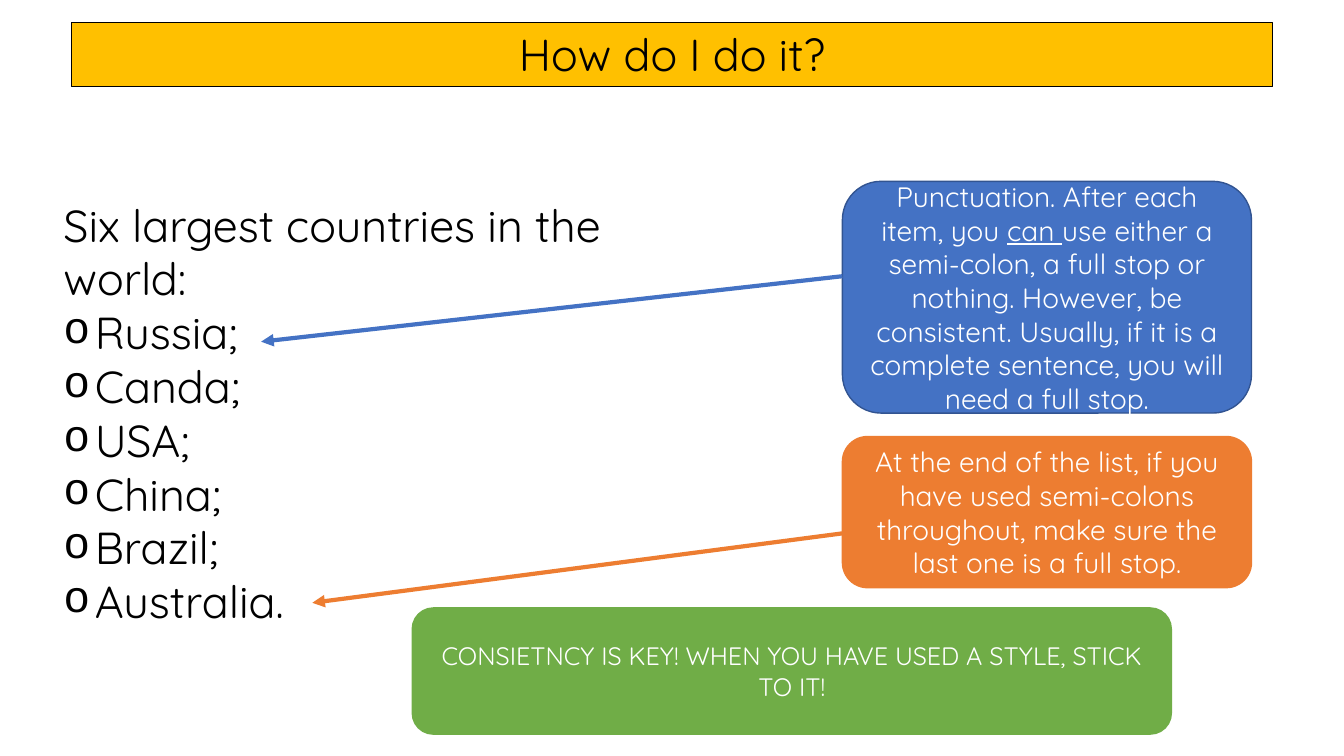
from lxml import etree
from pptx import Presentation
from pptx.dml.color import RGBColor
from pptx.enum import shapes as sh, text as tx
from pptx.oxml.ns import qn
from pptx.util import Cm, Pt

FONT = "Quicksand"
BLACK, WHITE = "000000", "FFFFFF"
BLUE, NAVY, ORANGE, GREEN, GOLD = "4472C4", "325491", "ED7D31", "70AD47", "FFC000"
RECT, ROUND = sh.MSO_SHAPE.RECTANGLE, sh.MSO_SHAPE.ROUNDED_RECTANGLE
LEFT, MID = tx.PP_ALIGN.LEFT, tx.PP_ALIGN.CENTER
NOTE_X, NOTE_W = 21.23, 10.31  # column of side notes, in cm


def color(code):
    return RGBColor.from_string(code)


def add_box(slide, kind, place, fill, edge, width):
    box = slide.shapes.add_shape(kind, *[Cm(n) for n in place])
    box.shadow.inherit = False
    box.fill.solid()
    box.fill.fore_color.rgb = color(fill)
    box.line.color.rgb = color(edge)
    box.line.width = Pt(width)
    box.text_frame.word_wrap = True
    return box


def add_run(par, words, size, ink, under=False):
    run = par.add_run()
    run.text = words
    run.font.name = FONT
    run.font.size = Pt(size)
    run.font.color.rgb = color(ink)
    if under:
        run.font.underline = True


def add_bullet(par):
    props = par._p.get_or_add_pPr()
    props.set("marL", str(Cm(0.79)))
    props.set("indent", str(-Cm(0.79)))
    etree.SubElement(props, qn("a:buFont")).set("typeface", "Courier New")
    etree.SubElement(props, qn("a:buChar")).set("char", "o")


def add_panel(slide, place, fill, edge, lines, align):
    """Square box, text from the top; every line after the first is a bullet."""
    frame = add_box(slide, RECT, place, fill, edge, 0.75).text_frame
    frame.vertical_anchor = tx.MSO_ANCHOR.TOP
    frame.auto_size = tx.MSO_AUTO_SIZE.SHAPE_TO_FIT_TEXT
    for i, words in enumerate(lines):
        par = frame.add_paragraph() if i else frame.paragraphs[0]
        par.alignment = align
        if i:
            add_bullet(par)
        add_run(par, words, 32, BLACK)


def add_note(slide, place, fill, edge, size, runs):
    """Rounded box with centred text; runs are (words, underlined) pairs."""
    frame = add_box(slide, ROUND, place, fill, edge, 1).text_frame
    frame.vertical_anchor = tx.MSO_ANCHOR.MIDDLE
    par = frame.paragraphs[0]
    par.alignment = MID
    for words, under in runs:
        add_run(par, words, size, WHITE, under)


def add_arrow(slide, start, end, ink):
    line = slide.shapes.add_connector(
        sh.MSO_CONNECTOR.STRAIGHT, *[Cm(n) for n in start + end])
    line.line.color.rgb = color(ink)
    line.line.width = Pt(3)
    etree.SubElement(line.line._get_or_add_ln(), qn("a:tailEnd")).set("type", "triangle")
    etree.SubElement(line._element.spPr, qn("a:effectLst"))


def main():
    deck = Presentation()
    deck.slide_width, deck.slide_height = Cm(33.87), Cm(19.05)
    slide = deck.slides.add_slide(deck.slide_layouts[6])

    # List and title
    add_panel(slide, (1.35, 4.85, 14.2, 11.2), WHITE, WHITE,
              ["Six largest countries in the world:", "Russia;", "Canda;",
               "USA;", "China;", "Brazil;", "Australia."], LEFT)
    add_panel(slide, (1.8, 0.56, 30.28, 1.63), GOLD, BLACK,
              ["How do I do it?"], MID)

    # Punctuation note
    add_note(slide, (NOTE_X, 4.57, NOTE_W, 5.84), BLUE, NAVY, 20, [
        ("Punctuation. After each item, you ", False),
        ("can ", True),
        ("use either a semi-colon, a full stop or nothing. However, be "
         "consistent. Usually, if it is a complete sentence, you will need "
         "a full stop.", False)])
    add_arrow(slide, (NOTE_X, 6.96), (6.58, 8.61), BLUE)

    # Last item note
    add_note(slide, (NOTE_X, 11, NOTE_W, 3.81), ORANGE, ORANGE, 20, [
        ("At the end of the list, if you have used semi-colons throughout, "
         "make sure the last one is a full stop.", False)])
    add_arrow(slide, (NOTE_X, 13.44), (7.87, 15.19), ORANGE)

    # Closing reminder
    add_note(slide, (10.39, 15.32, 19.13, 3.18), GREEN, GREEN, 18, [
        ("CONSIETNCY IS KEY! WHEN YOU HAVE USED A STYLE, STICK TO IT!", False)])

    deck.save("out.pptx")


if __name__ == "__main__":
    main()
